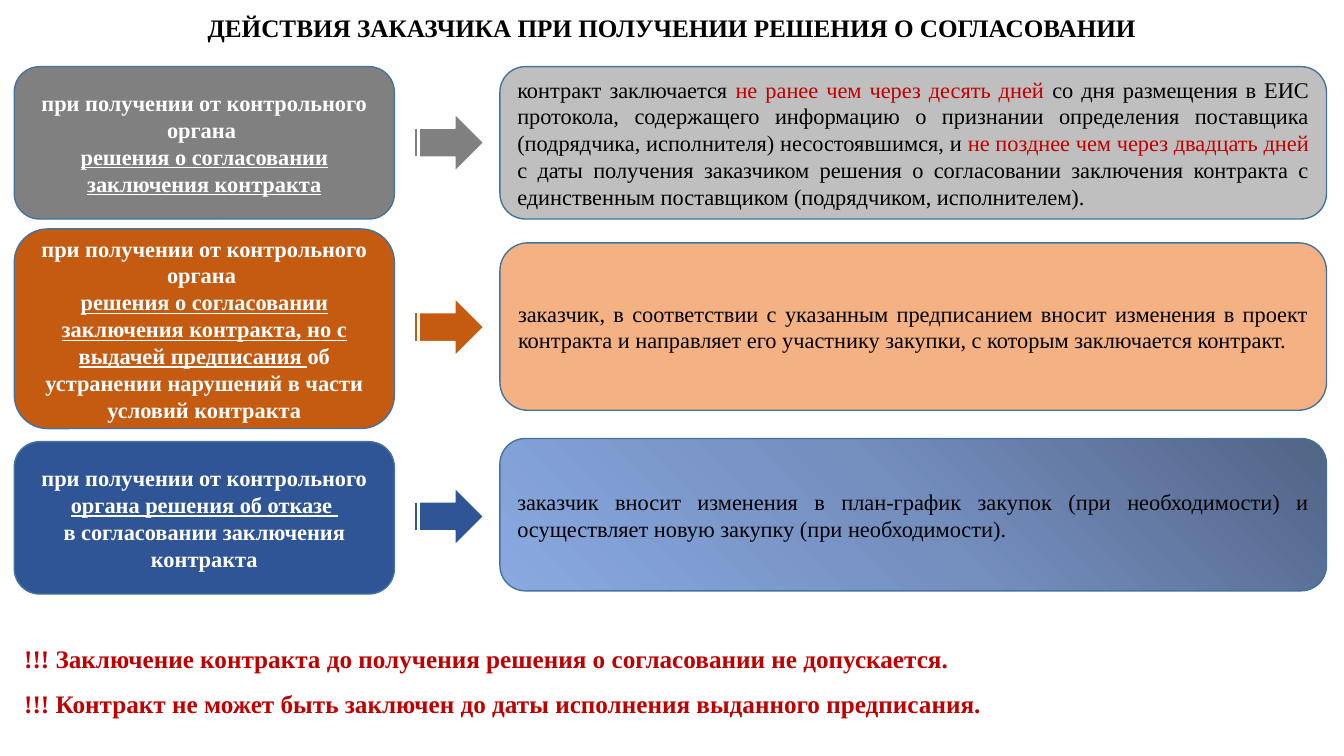
from dataclasses import dataclass

from pptx import Presentation
from pptx.dml.color import RGBColor as RGB
from pptx.enum.shapes import MSO_SHAPE as SHAPE
from pptx.enum.text import MSO_ANCHOR as ANCHOR, PP_ALIGN as ALIGN
from pptx.oxml import parse_xml
from pptx.oxml.ns import nsdecls, qn
from pptx.util import Cm, Pt


@dataclass(frozen=True)
class Theme:
    font: str = "Times New Roman"
    heading: int = 18
    body: int = 16
    black: str = "000000"
    white: str = "FFFFFF"
    red: str = "C00000"
    outline: str = "43739E"
    gray: str = "808080"
    light_gray: str = "BFBFBF"
    orange: str = "C55A11"
    light_orange: str = "F4B183"
    blue: str = "2F5597"
    blue_fade: tuple = ((0, "516486"), (50, "748EBE"), (100, "89A9E1"))


THEME = Theme()


class SlideBuilder:
    def __init__(self, slide, theme):
        self.slide, self.theme = slide, theme

    def fill_text(self, tf, paragraphs, size, color, align, bold=False, gap=0):
        """Each paragraph is a list of (text, style) runs; style may be "u" or "red"."""
        tf.word_wrap = True
        for i, runs in enumerate(paragraphs):
            p = tf.add_paragraph() if i else tf.paragraphs[0]
            p.alignment = align
            p.space_before = Pt(gap if i else 0)
            for text, style in runs:
                r = p.add_run()
                r.text = text
                r.font.name, r.font.size, r.font.bold = self.theme.font, Pt(size), bold
                r.font.underline = style == "u"
                r.font.color.rgb = RGB.from_string(self.theme.red if style == "red" else color)

    def text(self, box, paragraphs, color, align, anchor=ANCHOR.TOP, gap=0):
        s = self.slide.shapes.add_textbox(*map(Cm, box))
        s.text_frame.vertical_anchor = anchor
        self.fill_text(s.text_frame, paragraphs, self.theme.heading, color, align, True, gap)

    def shape(self, kind, box, fill, line):
        sp = self.slide.shapes.add_shape(kind, *map(Cm, box))
        sp.shadow.inherit = False
        sp.line.color.rgb = RGB.from_string(line)
        sp.line.width = Pt(1)
        if isinstance(fill, tuple):
            self.radial_fill(sp, fill)
        else:
            sp.fill.solid()
            sp.fill.fore_color.rgb = RGB.from_string(fill)
        return sp

    def radial_fill(self, sp, stops):
        """Gradient that spreads from the top right corner."""
        sp.fill.background()
        spPr = sp._element.spPr
        gs = "".join(f'<a:gs pos="{pos * 1000}"><a:srgbClr val="{color}"/></a:gs>'
                     for pos, color in stops)
        spPr.replace(spPr.find(qn("a:noFill")), parse_xml(
            f'<a:gradFill {nsdecls("a")} rotWithShape="1"><a:gsLst>{gs}</a:gsLst>'
            '<a:path path="circle"><a:fillToRect l="100000" b="100000"/></a:path>'
            '</a:gradFill>'))

    def card(self, box, fill, paragraphs, color, align, bold=False):
        sp = self.shape(SHAPE.ROUNDED_RECTANGLE, box, fill, self.theme.outline)
        sp.text_frame.vertical_anchor = ANCHOR.MIDDLE
        self.fill_text(sp.text_frame, paragraphs, self.theme.body, color, align, bold)

    def arrow(self, box, fill):
        self.shape(SHAPE.STRIPED_RIGHT_ARROW, box, fill, self.theme.white)


# Columns as (left, width), in cm
CASE, ARROW, ACTION = (0.36, 9.58), (10.34, 1.85), (12.6, 20.83)
ARROW_HEIGHT = 1.45

# Rows: colours, (top, height) of both cards, top of the arrow, texts
ROWS = [
    (THEME.gray, THEME.light_gray, (1.68, 3.84), (1.68, 3.84), 2.87,
     [[("при получении от контрольного органа ", "")],
      [("решения о согласовании заключения контракта", "u")]],
     [("контракт заключается ", ""),
      ("не ранее чем через десять дней ", "red"),
      ("со дня размещения в ЕИС протокола, содержащего информацию о признании "
       "определения поставщика (подрядчика, исполнителя) несостоявшимся, и ", ""),
      ("не позднее чем через двадцать дней ", "red"),
      ("с даты получения заказчиком решения о согласовании заключения контракта "
       "с единственным поставщиком (подрядчиком, исполнителем). ", "")]),
    (THEME.orange, THEME.light_orange, (5.77, 5.03), (6.12, 4.22), 7.52,
     [[("при получении от контрольного органа ", "")],
      [("решения о согласовании заключения контракта, но с выдачей предписания ", "u"),
       ("об устранении нарушений в части условий контракта", "")]],
     [("заказчик, в соответствии с указанным предписанием вносит изменения в проект "
       "контракта и направляет его участнику закупки, с которым заключается контракт. ", "")]),
    (THEME.blue, THEME.blue_fade, (11.13, 3.84), (11.05, 3.84), 12.29,
     [[("при получении от контрольного ", ""), ("органа решения об отказе ", "u")],
      [("в согласовании заключения контракта", "")]],
     [("заказчик вносит изменения в план-график закупок (при необходимости) и "
       "осуществляет новую закупку (при необходимости).", "")]),
]

WARNINGS = [
    [("!!! Заключение контракта до получения решения о согласовании не допускается.", "")],
    [("!!! Контракт не может быть заключен до даты исполнения выданного предписания.", "")],
]


def main():
    prs = Presentation()
    prs.slide_width, prs.slide_height = Cm(33.87), Cm(19.05)
    s = SlideBuilder(prs.slides.add_slide(prs.slide_layouts[6]), THEME)

    # Title
    s.text((0, 0, 33.87, 1.37),
           [[("ДЕЙСТВИЯ ЗАКАЗЧИКА ПРИ ПОЛУЧЕНИИ РЕШЕНИЯ О СОГЛАСОВАНИИ", "")]],
           THEME.black, ALIGN.CENTER, ANCHOR.MIDDLE)

    # Case, arrow and action in each row
    for dark, light, case, action, arrow_top, case_text, action_text in ROWS:
        s.card((CASE[0], case[0], CASE[1], case[1]), dark, case_text,
               THEME.white, ALIGN.CENTER, bold=True)
        s.arrow((ARROW[0], arrow_top, ARROW[1], ARROW_HEIGHT), dark)
        s.card((ACTION[0], action[0], ACTION[1], action[1]), light, [action_text],
               THEME.black, ALIGN.JUSTIFY)

    # Warnings
    s.text((0.36, 16.08, 33.43, 2.13), WARNINGS, THEME.red, ALIGN.JUSTIFY, gap=10.5)

    prs.save("out.pptx")


if __name__ == "__main__":
    main()
